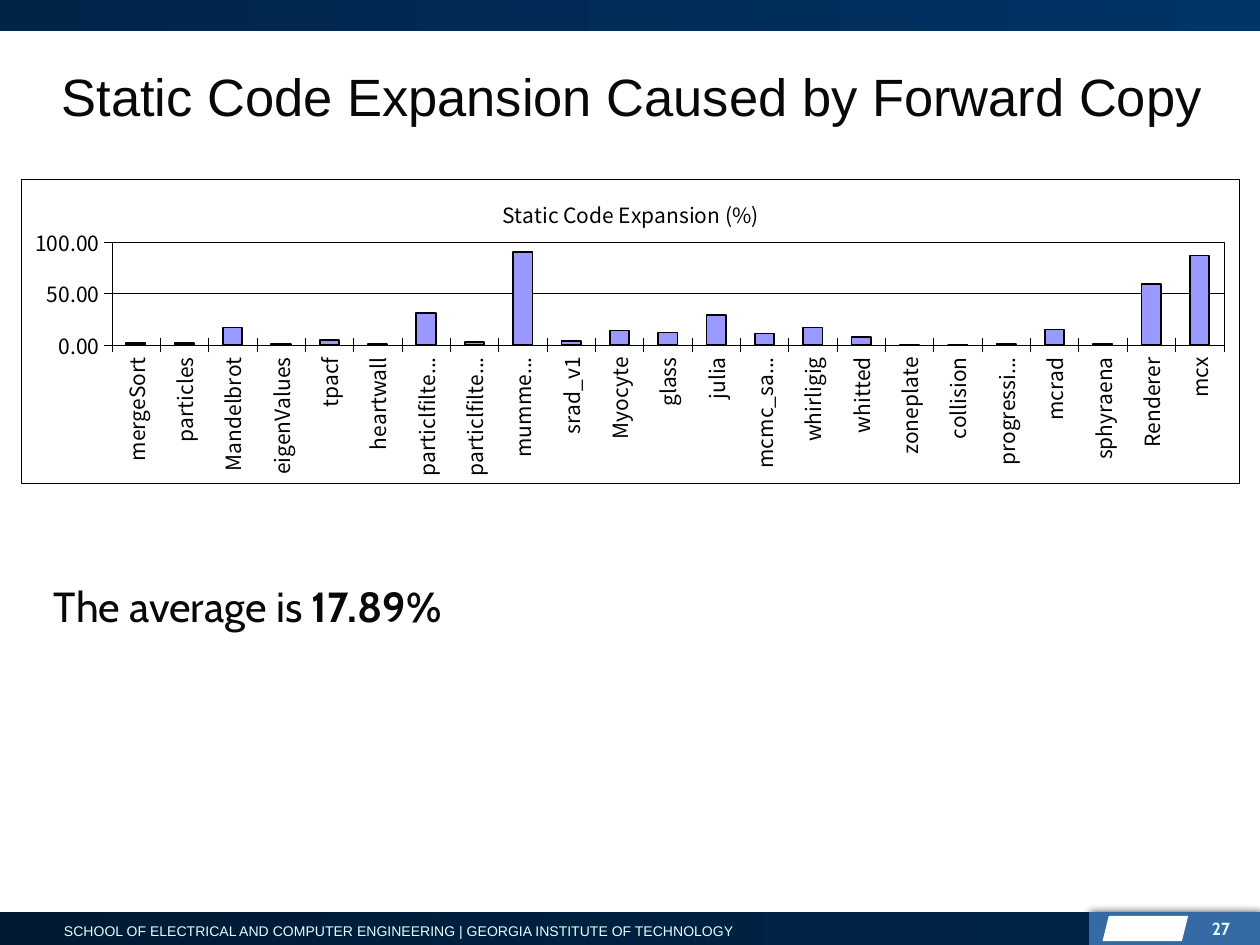
from lxml import etree
from pptx import Presentation
from pptx import util as u
from pptx.chart.data import CategoryChartData
from pptx.dml.color import RGBColor
from pptx.enum import chart as ch, shapes, text
from pptx.oxml import parse_xml
from pptx.oxml.ns import nsdecls, qn

THEME = {
    "ink": "080808", "black": "000000", "white": "FFFFFF", "pale": "E5FFFF",
    "bar": "9999FF", "panel": "366AA4",
    "navy": ("001A34", "002448", "003366"),
    "head": "Arial", "body": "Cabin", "chart": "Noto Sans CJK SC",
    "title_pt": 30, "body_pt": 24, "chart_pt": 12, "page_pt": 10, "footer_pt": 8,
}

TITLE = "Static Code Expansion Caused by Forward Copy"
AVERAGE = [("The average is ", False), ("17.89%", True)]
FOOTER = ("SCHOOL OF ELECTRICAL AND COMPUTER ENGINEERING"
          " | GEORGIA INSTITUTE OF TECHNOLOGY")
PAGE = "27"
SERIES = "Static Code Expansion (%)"
EXPANSION = [
    ("mergeSort", 2), ("particles", 2), ("Mandelbrot", 17), ("eigenValues", 1),
    ("tpacf", 5), ("heartwall", 1), ("particlfilter_naive", 31),
    ("particlfilter_float", 3), ("mummergpu", 90), ("srad_v1", 4),
    ("Myocyte", 14), ("glass", 12), ("julia", 29), ("mcmc_sampler", 11),
    ("whirligig", 17), ("whitted", 8), ("zoneplate", 0), ("collision", 0),
    ("progressivePhotonMap", 1), ("mcrad", 15), ("sphyraena", 1),
    ("Renderer", 59), ("mcx", 87),
]
PLOT = {"x": 0.074, "y": 0.207, "w": 0.913, "h": 0.338}

BAND_TOP, BAND_H = 7.24, 0.26
PANEL_LEFT = 8.64


def rgb(name):
    return RGBColor.from_string(THEME.get(name, name))


def box(at):
    return [u.Inches(v) for v in at]


def set_font(font, face, size, color, bold=False):
    font.name, font.size, font.bold = THEME[face], u.Pt(THEME[size]), bold
    font.color.rgb = rgb(color)


def set_line(line, width=0.25):
    line.color.rgb = rgb("black")
    line.width = u.Pt(width)


def add_block(s, at, fill, kind=shapes.MSO_SHAPE.RECTANGLE):
    """Add a borderless shape; a pair of colours gives a left-to-right gradient."""
    sp = s.shapes.add_shape(kind, *box(at))
    sp.shadow.inherit = False
    sp.line.fill.background()
    if isinstance(fill, str):
        sp.fill.solid()
        sp.fill.fore_color.rgb = rgb(fill)
    else:
        sp.fill.gradient()
        sp.fill.gradient_angle = 0
        for stop, color in zip(sp.fill.gradient_stops, fill):
            stop.color.rgb = rgb(color)
    return sp


def add_text(s, at, runs, face, size, color, align=text.PP_ALIGN.LEFT, wrap=True):
    """Add one paragraph made of (text, bold) runs."""
    tf = s.shapes.add_textbox(*box(at)).text_frame
    tf.word_wrap = wrap
    p = tf.paragraphs[0]
    p.alignment = align
    set_font(p.font, face, size, color)
    for words, bold in runs:
        r = p.add_run()
        r.text = words
        set_font(r.font, face, size, color, bold)
    return tf


def add_panel(s):
    sp = add_block(s, (PANEL_LEFT, BAND_TOP, 10 - PANEL_LEFT, BAND_H), "panel")
    effects = sp._element.spPr.find(qn("a:effectLst"))
    effects.append(parse_xml(
        f'<a:outerShdw {nsdecls("a")} blurRad="{u.Pt(5)}" dist="{u.Pt(1)}" dir="0">'
        f'<a:srgbClr val="{THEME["black"]}"><a:alpha val="75000"/></a:srgbClr>'
        '</a:outerShdw>'))


def frame_xml(outline):
    """White fill with a thin black outline, for the chart and plot areas."""
    return parse_xml(
        f'<c:spPr {nsdecls("c", "a")}>'
        f'<a:solidFill><a:srgbClr val="{THEME["white"]}"/></a:solidFill>'
        f'<a:ln w="{u.Pt(outline)}"><a:solidFill><a:srgbClr val="{THEME["black"]}"/>'
        '</a:solidFill></a:ln></c:spPr>')


def place_plot(chart):
    area = chart._chartSpace.chart.plotArea
    for old in area.findall(qn("c:layout")):
        area.remove(old)
    layout = etree.Element(qn("c:layout"))
    manual = etree.SubElement(layout, qn("c:manualLayout"))
    values = [("layoutTarget", "inner"), ("xMode", "edge"), ("yMode", "edge")]
    for tag, val in values + list(PLOT.items()):
        etree.SubElement(manual, qn("c:" + tag)).set("val", str(val))
    area.insert(0, layout)
    area.append(frame_xml(0.25))
    chart._chartSpace.chart.addnext(frame_xml(0.25))


def add_expansion_chart(s, at):
    data = CategoryChartData(number_format="0.00")
    data.categories = [name for name, _ in EXPANSION]
    data.add_series(SERIES, [value for _, value in EXPANSION])
    chart = s.shapes.add_chart(
        ch.XL_CHART_TYPE.COLUMN_CLUSTERED, *box(at), data).chart
    chart.has_legend = False
    set_font(chart.font, "chart", "chart_pt", "black")
    chart.has_title = True
    chart.chart_title.include_in_layout = False
    tf = chart.chart_title.text_frame
    tf.text = SERIES
    for item in (tf.paragraphs[0], tf.paragraphs[0].runs[0]):
        set_font(item.font, "chart", "chart_pt", "black")

    plot = chart.plots[0]
    plot.gap_width = 150
    plot.vary_by_categories = False
    bars = plot.series[0].format
    bars.fill.solid()
    bars.fill.fore_color.rgb = rgb("bar")
    set_line(bars.line, 1)

    for axis in (chart.category_axis, chart.value_axis):
        axis.major_tick_mark = ch.XL_TICK_MARK.CROSS
        set_font(axis.tick_labels.font, "chart", "chart_pt", "black")
        set_line(axis.format.line)
    labels = chart.category_axis._element.find(qn("c:txPr")).find(qn("a:bodyPr"))
    labels.set("rot", "-5400000")
    labels.set("vert", "horz")
    axis = chart.value_axis
    axis.minimum_scale, axis.maximum_scale, axis.major_unit = 0, 100, 50
    axis.tick_labels.number_format = "0.00"
    axis.tick_labels.number_format_is_linked = False
    set_line(axis.major_gridlines.format.line)
    place_plot(chart)


def main():
    prs = Presentation()
    prs.slide_width, prs.slide_height = u.Inches(10), u.Inches(7.5)
    s = prs.slides.add_slide(prs.slide_layouts[6])
    dark, mid, light = THEME["navy"]

    add_panel(s)
    add_block(s, (8.75, 7.27, 0.68, 0.2), "white", shapes.MSO_SHAPE.PARALLELOGRAM)
    add_block(s, (0, BAND_TOP, PANEL_LEFT, BAND_H), (dark, mid))
    add_text(s, (0.41, 7.27, 5.53, 0.23), [(FOOTER, False)],
             "head", "footer_pt", "pale", wrap=False)
    add_block(s, (0, 0, 10, 0.25), (mid, light))

    title = add_text(s, (0.39, 0.24, 9.3, 1.04), [(TITLE, False)],
                     "head", "title_pt", "ink")
    title.vertical_anchor = text.MSO_ANCHOR.MIDDLE
    average = add_text(s, (0.33, 4.08, 9.35, 2.78), AVERAGE,
                       "body", "body_pt", "ink")
    average.margin_top = u.Inches(0.53)
    add_text(s, (9.44, BAND_TOP, 0.42, 0.23), [(PAGE, True)],
             "body", "page_pt", "pale", text.PP_ALIGN.RIGHT)
    add_expansion_chart(s, (0.17, 1.42, 9.67, 2.42))
    prs.save("out.pptx")


if __name__ == "__main__":
    main()
